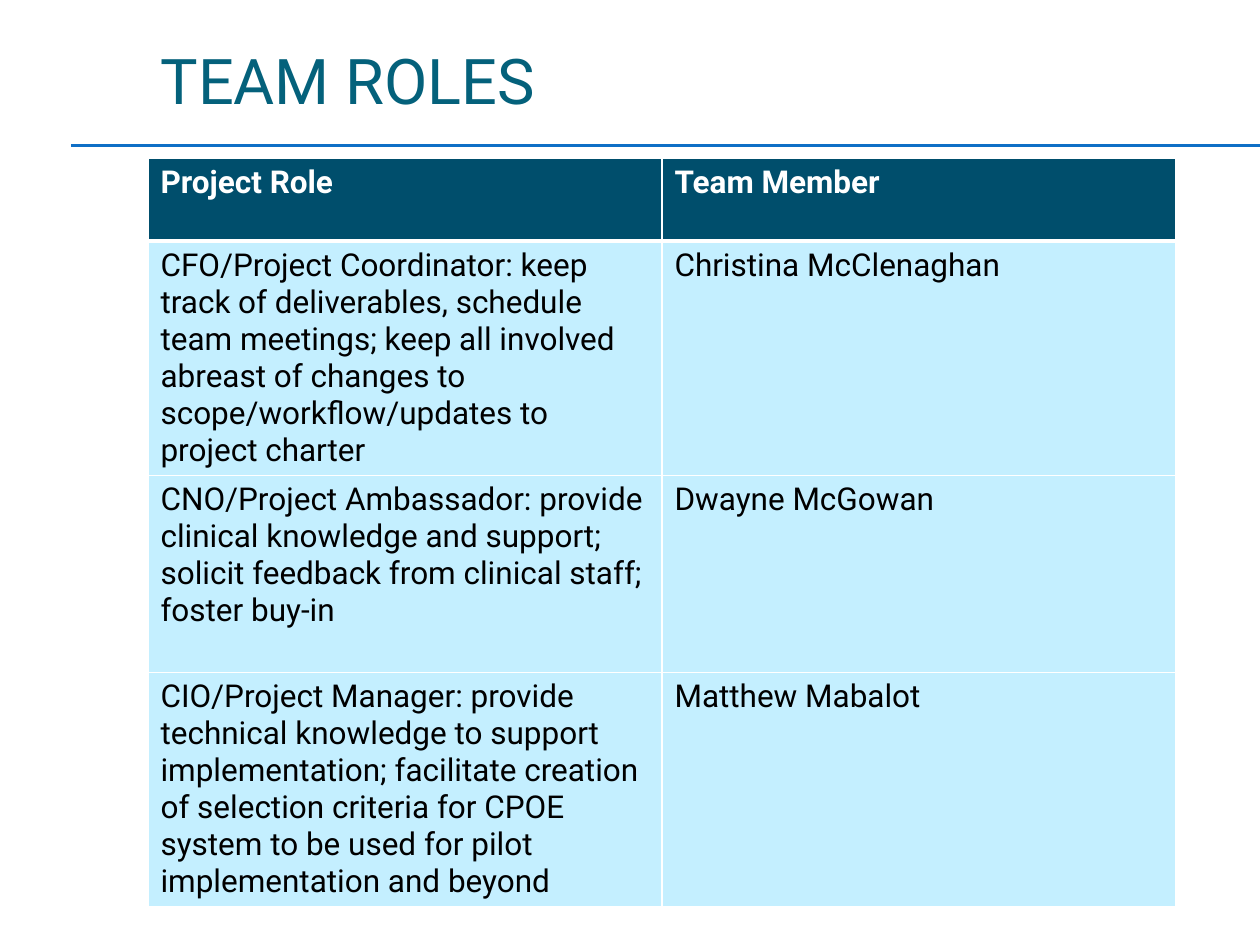
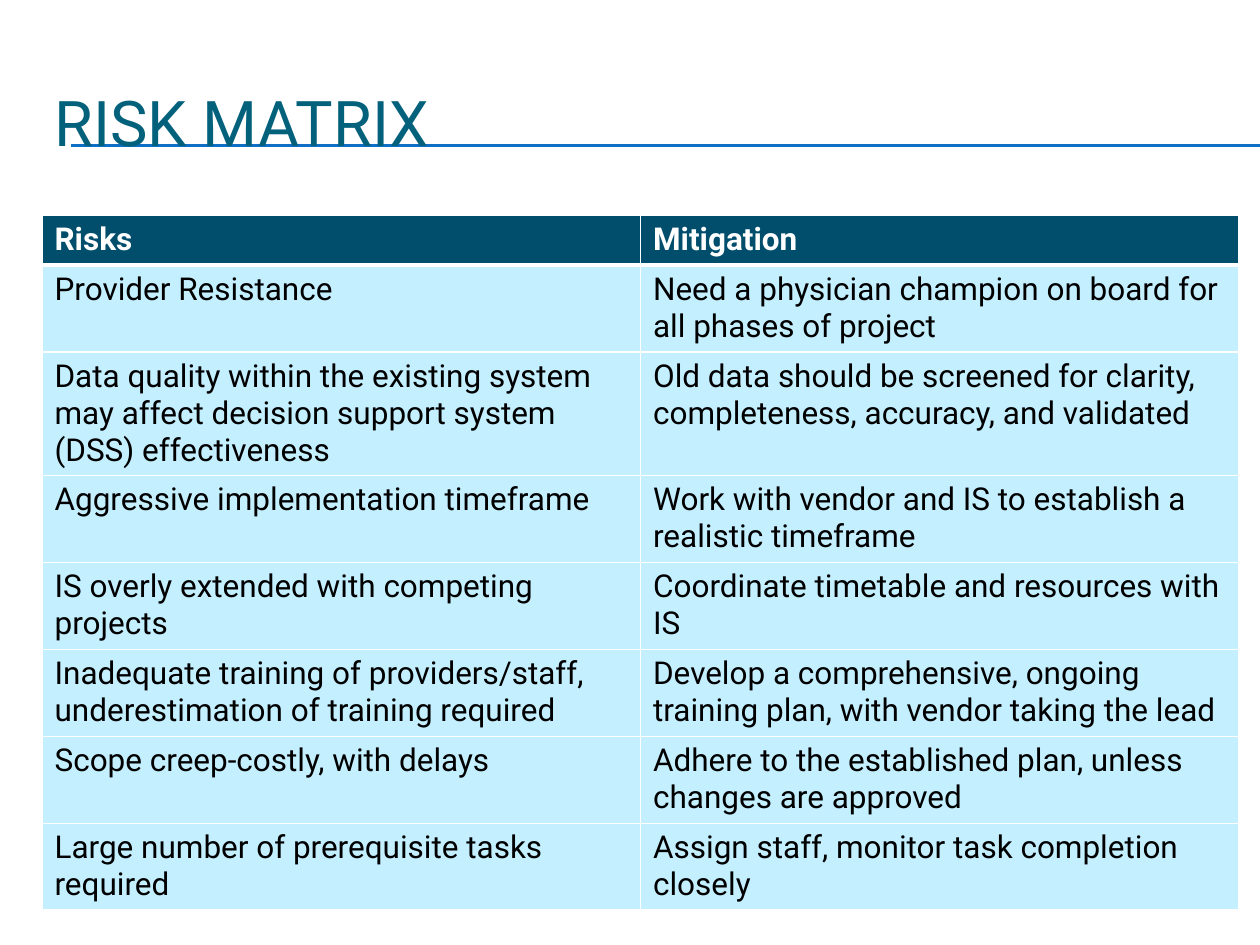
from dataclasses import dataclass

from lxml.etree import SubElement
from pptx import Presentation
from pptx.dml.color import RGBColor
from pptx.enum.shapes import MSO_CONNECTOR
from pptx.enum.text import MSO_ANCHOR, MSO_AUTO_SIZE, PP_ALIGN
from pptx.oxml.ns import qn
from pptx.util import Emu, Pt


@dataclass(frozen=True)
class Theme:
    """Colours, font and sizes in points that all slides share."""
    font: str = "Roboto"
    title: str = "04617B"
    rule: str = "0F6FC6"
    head: str = "004E6C"
    body: str = "C4EFFF"
    white: str = "FFFFFF"
    black: str = "000000"
    big: int = 36
    text: int = 18
    thin: float = 0.75
    grid: int = 1
    thick: int = 3


THEME = Theme()
WIDTH, HEIGHT = 1260, 945

ROLES = [
    ("Project Role", "Team Member"),
    ("CFO/Project Coordinator: keep track of deliverables, schedule team "
     "meetings; keep all involved abreast of changes to "
     "scope/workflow/updates to project charter", "Christina McClenaghan"),
    ("CNO/Project Ambassador: provide clinical knowledge and support; "
     "solicit feedback from clinical staff; foster buy-in", "Dwayne McGowan"),
    ("CIO/Project Manager: provide technical knowledge to support "
     "implementation; facilitate creation of selection criteria for CPOE "
     "system to be used for pilot implementation and beyond",
     "Matthew Mabalot"),
]

RISKS = [
    ("Risks", "Mitigation"),
    ("Provider Resistance",
     "Need a physician champion on board for all phases of project"),
    ("Data quality within the existing system may affect decision support "
     "system (DSS) effectiveness",
     "Old data should be screened for clarity, completeness, accuracy, "
     "and validated"),
    ("Aggressive implementation timeframe",
     "Work with vendor and IS to establish a realistic timeframe"),
    ("IS overly extended with competing projects",
     "Coordinate timetable and resources with IS"),
    ("Inadequate training of providers/staff, underestimation of training "
     "required",
     "Develop a comprehensive, ongoing training plan, with vendor taking "
     "the lead"),
    ("Scope creep-costly, with delays",
     "Adhere to the established plan, unless changes are approved"),
    ("Large number of prerequisite tasks required",
     "Assign staff, monitor task completion closely"),
]


def px(count):
    """Turn px into EMU."""
    return Emu(round(count * 914400 / 126))


def style(frame, size, color, bold=False):
    """Format every run of a text frame."""
    for para in frame.paragraphs:
        para.alignment = PP_ALIGN.LEFT
        for run in para.runs:
            run.font.name = THEME.font
            run.font.size = Pt(size)
            run.font.bold = bold
            run.font.color.rgb = RGBColor.from_string(color)


def add_rules(slide, left, top):
    """Draw the twin rules from left to the slide edge, behind the title."""
    for y in (top, top + 1):
        line = slide.shapes.add_connector(
            MSO_CONNECTOR.STRAIGHT, px(left), px(y), px(WIDTH), px(y))
        line.line.color.rgb = RGBColor.from_string(THEME.rule)
        line.line.width = Pt(THEME.thin)
        SubElement(line.element.spPr, qn("a:effectLst"))
        slide.shapes.element.insert(2, line.element)


def add_title(slide, text, box):
    """Move the title placeholder into the box and fill it."""
    title = slide.shapes.title
    title.left, title.top, title.width, title.height = map(px, box)
    frame = title.text_frame
    frame.text = text
    frame.auto_size = MSO_AUTO_SIZE.NONE
    frame.vertical_anchor = MSO_ANCHOR.MIDDLE
    style(frame, THEME.big, THEME.title)


def add_edge(cell, side, width):
    """Give one side of a cell a white border."""
    props = cell._tc.get_or_add_tcPr()
    edge = SubElement(props, qn("a:ln" + side), w=str(Pt(width)))
    fill = SubElement(edge, qn("a:solidFill"))
    SubElement(fill, qn("a:srgbClr"), val=THEME.white)


def fill_cell(cell, text, row):
    """Write and colour a cell; row 0 is the header."""
    head = row == 0
    top = THEME.thick if row == 1 else THEME.grid
    low = THEME.thick if head else THEME.grid
    for side, width in zip("LRTB", (THEME.grid, THEME.grid, top, low)):
        add_edge(cell, side, width)
    cell.fill.solid()
    cell.fill.fore_color.rgb = RGBColor.from_string(
        THEME.head if head else THEME.body)
    cell.text_frame.text = text
    style(cell.text_frame, THEME.text,
          THEME.white if head else THEME.black, head)


def add_grid(slide, rows, box, heights):
    """Build a table of equal columns across the box."""
    left, top, width = box
    count = len(rows[0])
    table = slide.shapes.add_table(
        len(rows), count, px(left), px(top), px(width),
        px(sum(heights))).table
    table.horz_banding = False
    for col in table.columns:
        col.width = px(width / count)
    for r, (texts, height) in enumerate(zip(rows, heights)):
        table.rows[r].height = px(height)
        for c, text in enumerate(texts):
            fill_cell(table.cell(r, c), text, r)


def add_page(deck, title, box, rows, top, heights):
    """Add a slide with rules, a title and a table of the same width."""
    slide = deck.slides.add_slide(deck.slide_layouts.get_by_name("Title Only"))
    add_rules(slide, 71, 145)
    add_title(slide, title, box)
    add_grid(slide, rows, (box[0], top, box[2]), heights)


def main():
    """Build and save both slides."""
    deck = Presentation()
    deck.slide_width, deck.slide_height = px(WIDTH), px(HEIGHT)
    add_page(deck, "TEAM ROLES", (148, 0, 1028, 158),
             ROLES, 158, (83, 234, 197, 234))
    add_page(deck, "RISK MATRIX", (42, 63, 1197, 116),
             RISKS, 215, (50, 87, 123) + (87,) * 5)
    deck.save("out.pptx")


if __name__ == "__main__":
    main()
